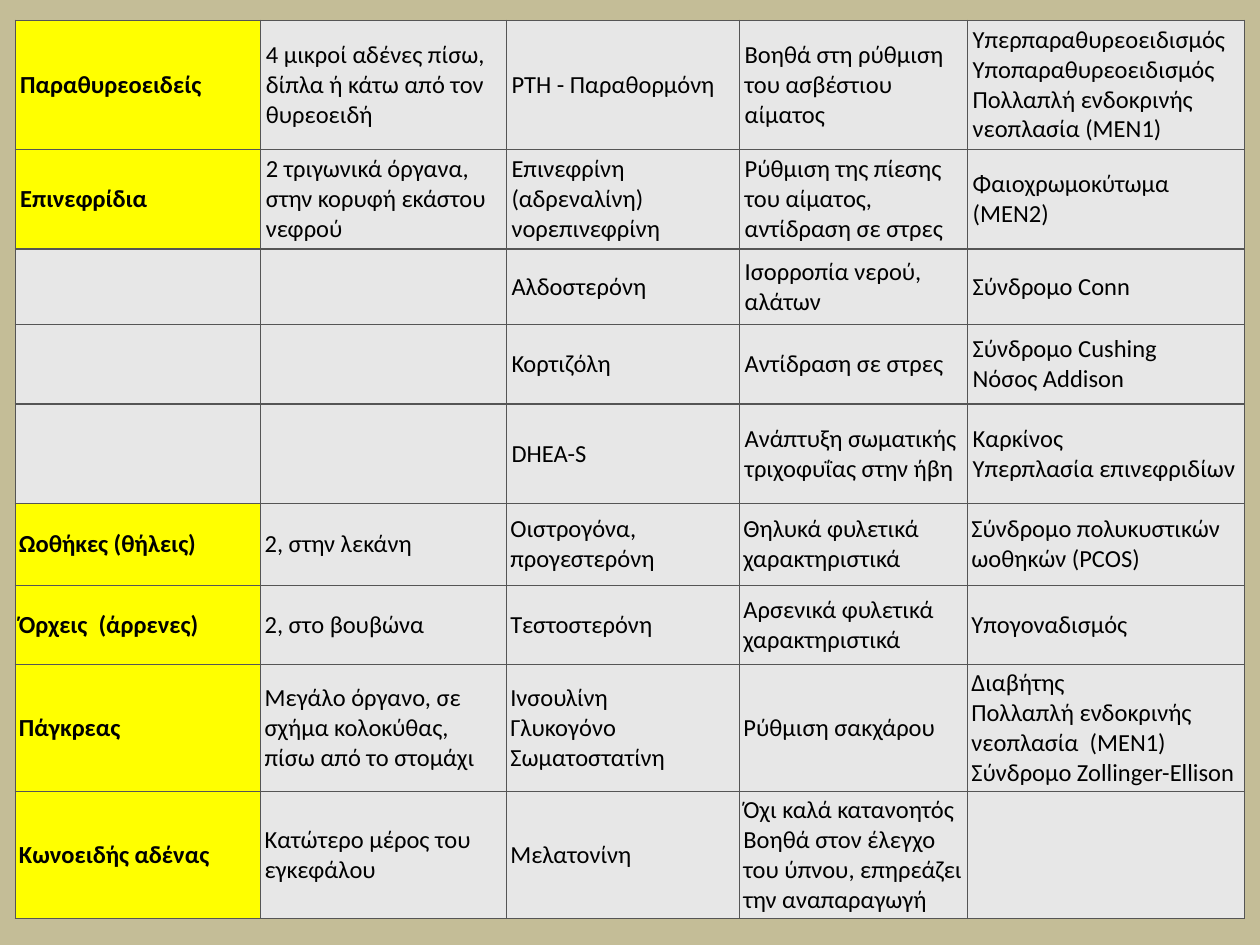
import pptx
import pptx.dml.color
import pptx.enum.text
import pptx.oxml
import pptx.oxml.ns
import pptx.util
from pptx.util import Inches

COLOURS = {
    "background": "C4BD97",
    "gland": "FFFF00",
    "detail": "E7E7E7",
    "border": "555555",
    "text": "000000",
}

COLUMN_WIDTHS = [1.95, 1.95, 1.85, 1.81, 2.2]
ROW_HEIGHTS = [1.02, 0.78, 0.6, 0.63, 0.79, 0.65, 0.63, 1, 1]

# Gland, place, hormone, action, disorders
ROWS = [
    ["Παραθυρεοειδείς", "4 μικροί αδένες πίσω, δίπλα ή κάτω από τον θυρεοειδή",
     "PTH - Παραθορμόνη", "Βοηθά στη ρύθμιση του ασβέστιου αίματος",
     "Υπερπαραθυρεοειδισμός\nΥποπαραθυρεοειδισμός\nΠολλαπλή ενδοκρινής νεοπλασία (MEN1)"],
    ["Επινεφρίδια", "2 τριγωνικά όργανα, στην κορυφή εκάστου νεφρού",
     "Επινεφρίνη (αδρεναλίνη)\nνορεπινεφρίνη",
     "Ρύθμιση της πίεσης του αίματος, αντίδραση σε στρες",
     "Φαιοχρωμοκύτωμα (MEN2)"],
    ["", "", "Αλδοστερόνη", "Ισορροπία νερού, αλάτων", "Σύνδρομο Conn"],
    ["", "", "Κορτιζόλη", "Αντίδραση σε στρες", "Σύνδρομο Cushing\nΝόσος Addison"],
    ["", "", "DHEA-S", "Ανάπτυξη σωματικής τριχοφυΐας στην ήβη",
     "Καρκίνος\nΥπερπλασία επινεφριδίων"],
    ["Ωοθήκες (θήλεις)", "2, στην λεκάνη", "Οιστρογόνα, προγεστερόνη",
     "Θηλυκά φυλετικά χαρακτηριστικά", "Σύνδρομο πολυκυστικών ωοθηκών (PCOS)"],
    ["Όρχεις  (άρρενες)", "2, στο βουβώνα", "Τεστοστερόνη",
     "Αρσενικά φυλετικά χαρακτηριστικά", "Υπογοναδισμός"],
    ["Πάγκρεας", "Μεγάλο όργανο, σε σχήμα κολοκύθας, πίσω από το στομάχι",
     "Ινσουλίνη\nΓλυκογόνο\nΣωματοστατίνη", "Ρύθμιση σακχάρου",
     "Διαβήτης\nΠολλαπλή ενδοκρινής νεοπλασία  (MEN1)\nΣύνδρομο Zollinger-Ellison"],
    ["Κωνοειδής αδένας", "Κατώτερο μέρος του εγκεφάλου", "Μελατονίνη",
     "Όχι καλά κατανοητός\nΒοηθά στον έλεγχο του ύπνου, επηρεάζει την αναπαραγωγή", ""],
]


def colour(name):
    return pptx.dml.color.RGBColor.from_string(COLOURS[name])


def add_borders(cell):
    properties = cell._tc.get_or_add_tcPr()
    for side in ("lnL", "lnR", "lnT", "lnB"):
        properties.append(pptx.oxml.parse_xml(
            f'<a:{side} {pptx.oxml.ns.nsdecls("a")} w="{pptx.util.Pt(0.75)}">'
            f'<a:solidFill><a:srgbClr val="{COLOURS["border"]}"/></a:solidFill></a:{side}>'))


# Page
deck = pptx.Presentation()
deck.slide_width = Inches(10)
deck.slide_height = Inches(7.5)
page = deck.slides.add_slide(deck.slide_layouts[6])
page.background.fill.solid()
page.background.fill.fore_color.rgb = colour("background")

# Table grid
table = page.shapes.add_table(
    len(ROWS), len(COLUMN_WIDTHS), Inches(0.12), Inches(0.16),
    Inches(sum(COLUMN_WIDTHS)), Inches(sum(ROW_HEIGHTS))).table
table.first_row = False
table.horz_banding = False
for column, width in zip(table.columns, COLUMN_WIDTHS):
    column.width = Inches(width)
for row, height in zip(table.rows, ROW_HEIGHTS):
    row.height = Inches(height)

# Cells: gland names are bold on yellow, the lower rows have tighter margins
for row_index, row_words in enumerate(ROWS):
    margin = Inches(0.04 if row_index < 5 else 0.03)
    for column_index, words in enumerate(row_words):
        cell = table.cell(row_index, column_index)
        is_gland = column_index == 0 and words != ""
        add_borders(cell)
        cell.fill.solid()
        cell.fill.fore_color.rgb = colour("gland" if is_gland else "detail")
        cell.vertical_anchor = pptx.enum.text.MSO_ANCHOR.MIDDLE
        cell.margin_left = cell.margin_right = margin
        cell.margin_top = cell.margin_bottom = margin
        if not words:
            continue
        para = cell.text_frame.paragraphs[0]
        para.text = words
        for span in para.runs:
            span.font.name = "Calibri"
            span.font.size = pptx.util.Pt(14)
            span.font.bold = is_gland
            span.font.color.rgb = colour("text")

deck.save("out.pptx")
